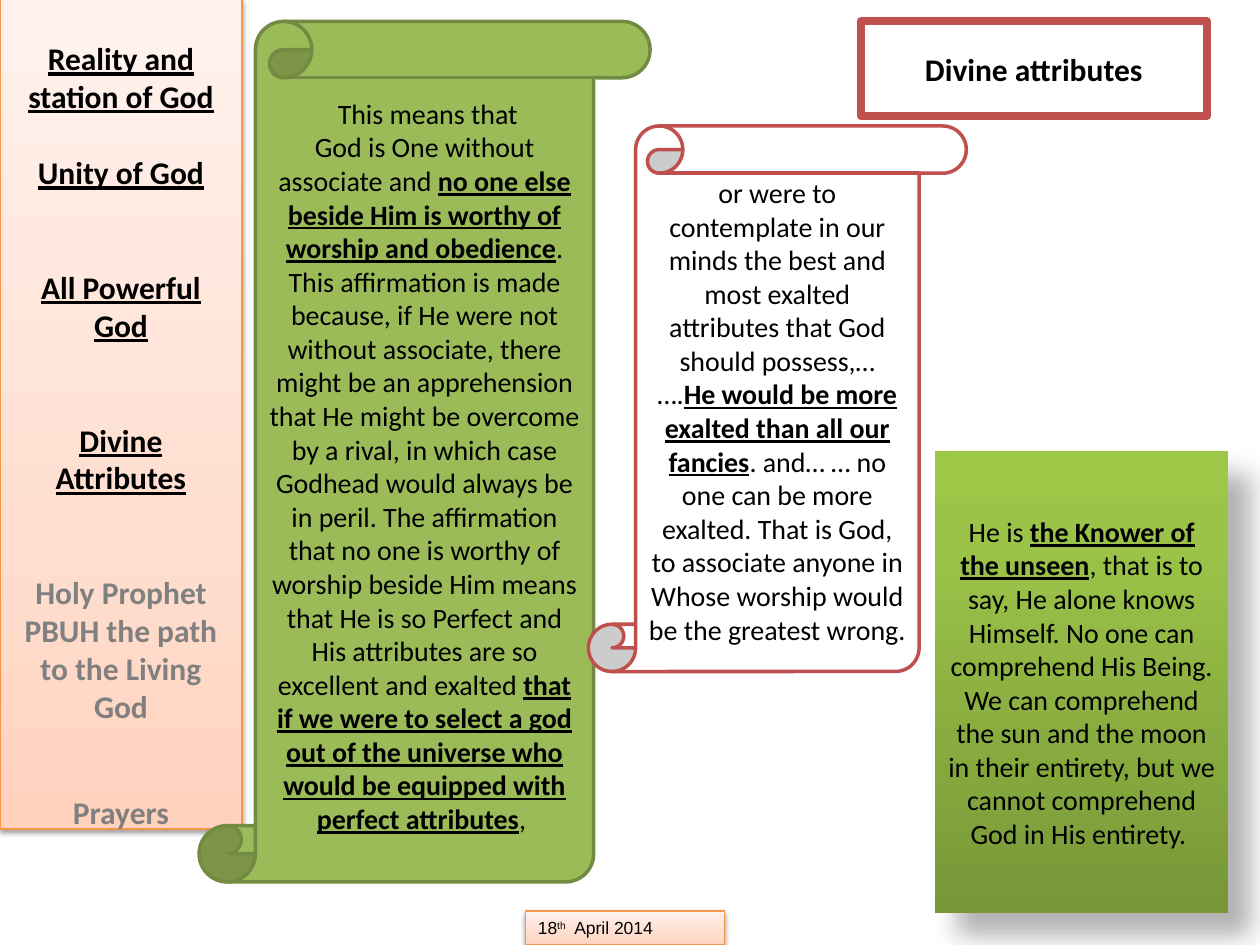
from dataclasses import dataclass

from lxml import etree
from pptx import Presentation
from pptx.dml.color import RGBColor
from pptx.enum import shapes, text
from pptx.oxml import ns
from pptx.util import Inches, Pt

BLACK = RGBColor(0, 0, 0)
WHITE = RGBColor(0xFF, 0xFF, 0xFF)
GRAY = RGBColor(0x80, 0x80, 0x80)
RED = RGBColor(0xC0, 0x50, 0x4D)
GREEN = RGBColor(0x9B, 0xBB, 0x59)
OLIVE = RGBColor(0x73, 0x8A, 0x42)
ORANGE = RGBColor(0xF7, 0x96, 0x46)

RECT = shapes.MSO_SHAPE.RECTANGLE
SCROLL = shapes.MSO_SHAPE.VERTICAL_SCROLL
PEACH = ((0, "FFD2BD"), (35, "FFDED0"), (100, "FFF2ED"))
LEAF = ((0, "779737"), (80, "9BC348"), (100, "9DC746"))


@dataclass
class Shade:
    alpha: int
    blur: float
    dist: float
    angle: int


@dataclass
class Panel:
    kind: int
    box: tuple
    fill: object  # one colour, or a tuple of gradient stops
    line: RGBColor | None = None
    width: float = 0
    shade: Shade | None = None


@dataclass
class Topic:
    name: str
    gap: float
    done: bool = True


SOFT = Shade(38, 3.1, 1.6, 90)
DEEP = Shade(30, 15, 18, 45)

SIDE = Panel(RECT, (0, -0.01, 1.92, 6.59), PEACH, ORANGE, 0.75, SOFT)
DATE = Panel(RECT, (4.17, 7.23, 1.58, 0.27), PEACH, ORANGE, 0.75, SOFT)

TOPICS = (
    Topic("Reality and station of God", 0),
    Topic("Unity of God", 22),
    Topic("All Powerful God", 44),
    Topic("Divine Attributes", 44),
    Topic("Holy Prophet PBUH the path to the Living God", 44, False),
    Topic("Prayers", 39, False),
)

# Each paragraph alternates plain and stressed wording.
QUOTES = (
    (Panel(SCROLL, (1.58, 0.17, 3.58, 6.83), GREEN, OLIVE, 2), (
        ("  This means that ",),
        ("God is One without associate and ",
         "no one else beside Him is worthy of worship and obedience",
         ". This affirmation is made because, if He were not without "
         "associate, there might be an apprehension that He might be "
         "overcome by a rival, in which case Godhead would always be in "
         "peril. The affirmation that no one is worthy of worship beside "
         "Him means that He is so Perfect and His attributes are so "
         "excellent and exalted ",
         "that if we were to select a god out of the universe who would be "
         "equipped with perfect attributes",
         ", "),
    )),
    (Panel(SCROLL, (4.67, 1, 3, 4.33), WHITE, RED, 2), (
        ("or were to contemplate in our minds the best and most exalted "
         "attributes that God should possess,… ….",
         "He would be more exalted than all our fancies",
         ". and… … no one can be more exalted. That is God, to associate "
         "anyone in Whose worship would be the greatest wrong. "),
    )),
    (Panel(RECT, (7.42, 3.58, 2.33, 3.67), LEAF, shade=DEEP), (
        ("He is ",
         "the Knower of the unseen",
         ", that is to say, He alone knows Himself. No one can comprehend "
         "His Being. We can comprehend the sun and the moon in their "
         "entirety, but we cannot comprehend God in His entirety. "),
    )),
)


def add_color(parent, value: str):
    return etree.SubElement(parent, ns.qn("a:srgbClr"), val=value)


def blend(shape, stops: tuple) -> None:
    """Fill the shape with a gradient that rises from the bottom."""
    shape.fill.gradient()
    shape.fill.gradient_angle = 90
    held = shape._element.spPr.find(".//" + ns.qn("a:gsLst"))
    for old in list(held):
        held.remove(old)
    for pos, value in stops:
        stop = etree.SubElement(held, ns.qn("a:gs"), pos=str(pos * 1000))
        add_color(stop, value)


def cast(shape, shade: Shade) -> None:
    """Give the shape an outer shadow."""
    effects = shape._element.spPr.find(ns.qn("a:effectLst"))
    outer = etree.SubElement(
        effects, ns.qn("a:outerShdw"), blurRad=str(Pt(shade.blur)),
        dist=str(Pt(shade.dist)), dir=str(shade.angle * 60000),
        algn="ctr", rotWithShape="0")
    alpha = etree.SubElement(add_color(outer, "000000"), ns.qn("a:alpha"))
    alpha.set("val", str(shade.alpha * 1000))


def add_panel(slide, panel: Panel):
    shape = slide.shapes.add_shape(panel.kind, *map(Inches, panel.box))
    shape.shadow.inherit = False
    if isinstance(panel.fill, RGBColor):
        shape.fill.solid()
        shape.fill.fore_color.rgb = panel.fill
    else:
        blend(shape, panel.fill)
    if panel.line is None:
        shape.line.fill.background()
    else:
        shape.line.color.rgb = panel.line
        shape.line.width = Pt(panel.width)
    if panel.shade:
        cast(shape, panel.shade)
    shape.text_frame.word_wrap = True
    return shape


def style(para, size: float, color: RGBColor = BLACK, face: str = "Calibri",
          align=text.PP_ALIGN.CENTER) -> None:
    para.alignment = align
    para.font.size = Pt(size)
    para.font.name = face
    para.font.color.rgb = color


def next_para(frame, index: int):
    return frame.add_paragraph() if index else frame.paragraphs[0]


def add_title(slide) -> None:
    title = slide.shapes.title
    title.left, title.top, title.width, title.height = map(
        Inches, (6.83, 0.17, 2.75, 0.75))
    title.fill.solid()
    title.fill.fore_color.rgb = WHITE
    title.line.color.rgb = RED
    title.line.width = Pt(4.5)
    frame = title.text_frame
    frame.text = "Divine attributes"
    frame.auto_size = text.MSO_AUTO_SIZE.NONE
    frame.vertical_anchor = text.MSO_ANCHOR.MIDDLE
    style(frame.paragraphs[0], 18)
    frame.paragraphs[0].font.bold = True


def add_topics(slide) -> None:
    frame = add_panel(slide, SIDE).text_frame
    frame.vertical_anchor = text.MSO_ANCHOR.TOP
    frame.margin_top = Inches(0.32)
    for index, topic in enumerate(TOPICS):
        para = next_para(frame, index)
        para.text = topic.name
        para.space_before = Pt(topic.gap)
        style(para, 18, BLACK if topic.done else GRAY)
        para.font.bold = True
        para.font.underline = topic.done


def add_date(slide) -> None:
    frame = add_panel(slide, DATE).text_frame
    frame.vertical_anchor = text.MSO_ANCHOR.TOP
    para = frame.paragraphs[0]
    style(para, 10, face="Arial", align=text.PP_ALIGN.LEFT)
    for part in ("18", "th", "  April 2014"):
        run = para.add_run()
        run.text = part
        if part == "th":
            run._r.get_or_add_rPr().set("baseline", "30000")


def add_quote(slide, panel: Panel, paras: tuple) -> None:
    frame = add_panel(slide, panel).text_frame
    frame.vertical_anchor = text.MSO_ANCHOR.MIDDLE
    for index, parts in enumerate(paras):
        para = next_para(frame, index)
        style(para, 16)
        for order, part in enumerate(parts):
            run = para.add_run()
            run.text = part
            if order % 2:
                run.font.bold = run.font.underline = True


def main() -> None:
    deck = Presentation()
    deck.slide_width, deck.slide_height = Inches(10), Inches(7.5)
    slide = deck.slides.add_slide(deck.slide_layouts[5])
    add_title(slide)
    add_topics(slide)
    add_date(slide)
    for panel, paras in QUOTES:
        add_quote(slide, panel, paras)
    deck.save("out.pptx")


if __name__ == "__main__":
    main()
